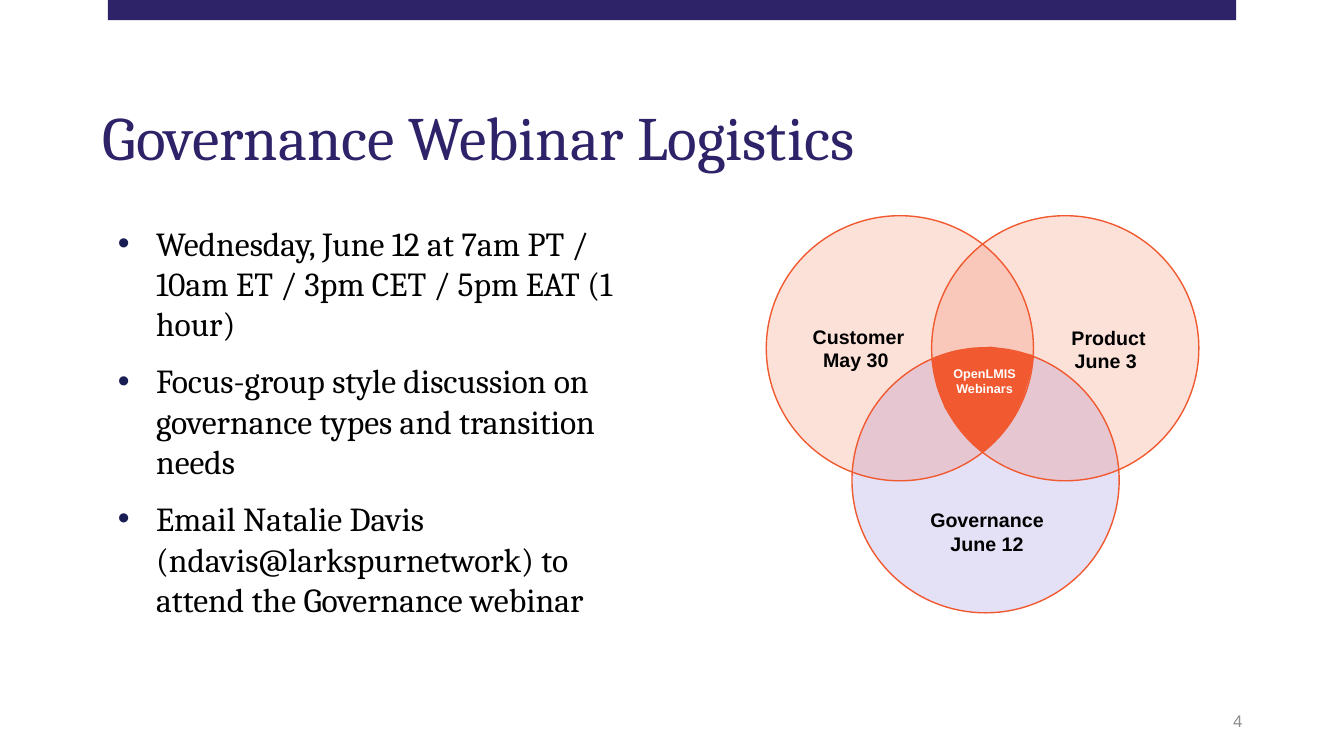
from pptx import Presentation
from pptx.dml.color import RGBColor
from pptx.enum.shapes import MSO_SHAPE as SHAPE
from pptx.enum.text import MSO_ANCHOR as ANCHOR, MSO_AUTO_SIZE as AUTO, PP_ALIGN as ALIGN
from pptx.oxml.ns import qn
from pptx.util import Pt
from lxml.etree import SubElement

PX = 9144
NAVY, ORANGE, VIOLET = "2E2268", "F15A30", "6A57C8"
BULLETS = [
    "Wednesday, June 12 at 7am PT / 10am ET / 3pm CET / 5pm EAT (1 hour)",
    "Focus-group style discussion on governance types and transition needs",
    "Email Natalie Davis (ndavis@larkspurnetwork) to attend the Governance webinar",
]
CIRCLES = [(845, 345, VIOLET), (760, 214, ORANGE), (924, 214, ORANGE)]
LABELS = [
    (1005, 318, 189, ["Product", "June 3 "]),
    (771, 317, 161, ["Customer", "May 30 "]),
    (850, 499, 258, ["Governance", "June 12"]),
]
OVERLAP = [(926, 357), (931, 383), (939, 404), (951, 422), (968, 441), (975, 446),
           (992, 430), (1005, 411), (1013, 394), (1020, 371), (1023, 354),
           (998, 349), (983, 346), (962, 348), (947, 350)]


def emu(*lengths):
    """Turn px lengths into EMU."""
    return [n * PX for n in lengths]


def rgb(color):
    """Turn a hex string into a colour."""
    return RGBColor.from_string(color)


def paint(sp, fill, line=None, width=1, alpha=None):
    """Set fill, opacity in percent and outline of a shape."""
    sp.shadow.inherit = False
    sp.fill.solid()
    sp.fill.fore_color.rgb = rgb(fill)
    if alpha:
        clr = sp.fill._xPr.find(qn("a:solidFill")).find(qn("a:srgbClr"))
        SubElement(clr, qn("a:alpha"), val=str(alpha * 1000))
    if line:
        sp.line.color.rgb = rgb(line)
        sp.line.width = Pt(width)
    else:
        sp.line.fill.background()


def add_run(p, text, size, font, color, bold=False):
    """Add one formatted run to a paragraph."""
    r = p.add_run()
    r.text = text
    r.font.size, r.font.name, r.font.bold = Pt(size), font, bold
    r.font.color.rgb = rgb(color)


def add_bullet(p):
    """Give a paragraph a hanging round bullet."""
    p.space_after = Pt(12)
    pPr = p._p.get_or_add_pPr()
    indent = 38 * PX
    pPr.set("marL", str(indent))
    pPr.set("indent", str(-indent))
    clr = SubElement(pPr, qn("a:buClr"))
    SubElement(clr, qn("a:srgbClr"), val="181D54")
    SubElement(pPr, qn("a:buFont"), typeface="Arial")
    SubElement(pPr, qn("a:buChar"), char="•")


def add_text(s, box, lines, size, font="Arial", color="000000", bold=False,
             align=ALIGN.CENTER, anchor=ANCHOR.TOP, bullets=False):
    """Add a wrapping text box with one paragraph per line."""
    tf = s.shapes.add_textbox(*emu(*box)).text_frame
    tf.word_wrap = True
    tf.vertical_anchor = anchor
    for i, line in enumerate(lines):
        p = tf.add_paragraph() if i else tf.paragraphs[0]
        p.alignment = align
        if bullets:
            add_bullet(p)
        add_run(p, line, size, font, color, bold)


def add_title(s, text):
    """Place and format the title placeholder."""
    sp = s.shapes.title
    sp.left, sp.top, sp.width, sp.height = emu(92, 40, 1150, 137)
    tf = sp.text_frame
    tf.auto_size = AUTO.NONE
    tf.vertical_anchor = ANCHOR.BOTTOM
    p = tf.paragraphs[0]
    p.alignment = ALIGN.LEFT
    p.line_spacing = 0.9
    add_run(p, text, 44, "Cambria", NAVY)


def add_venn(s):
    """Draw the three circles, their shared centre and the labels."""
    for x, y, color in CIRCLES:
        circle = s.shapes.add_shape(SHAPE.OVAL, *emu(x, y, 265, 263))
        paint(circle, color, ORANGE, alpha=18)
    fb = s.shapes.build_freeform(*OVERLAP[0], scale=PX)
    fb.add_line_segments(OVERLAP[1:], close=True)
    paint(fb.convert_to_shape(), ORANGE, ORANGE, 3)
    for x, y, w, lines in LABELS:
        add_text(s, (x, y, w, 57), lines, 14, bold=True)
    add_text(s, (922, 358, 109, 40), ["OpenLMIS Webinars"], 9, color="FFFFFF", bold=True)


def main():
    """Build and save the slide."""
    prs = Presentation()
    prs.slide_width, prs.slide_height = emu(1333, 750)
    s = prs.slides.add_slide(prs.slide_layouts[5])
    paint(s.shapes.add_shape(SHAPE.RECTANGLE, *emu(107, -2, 1119, 22)), NAVY)
    add_title(s, "Governance Webinar Logistics")
    add_text(s, (107, 216, 560, 464), BULLETS, 24, "Cambria", align=ALIGN.LEFT, bullets=True)
    add_text(s, (942, 695, 300, 40), ["4"], 12, color="8C8C8C",
             align=ALIGN.RIGHT, anchor=ANCHOR.MIDDLE)
    add_venn(s)
    prs.save("out.pptx")


if __name__ == "__main__":
    main()
